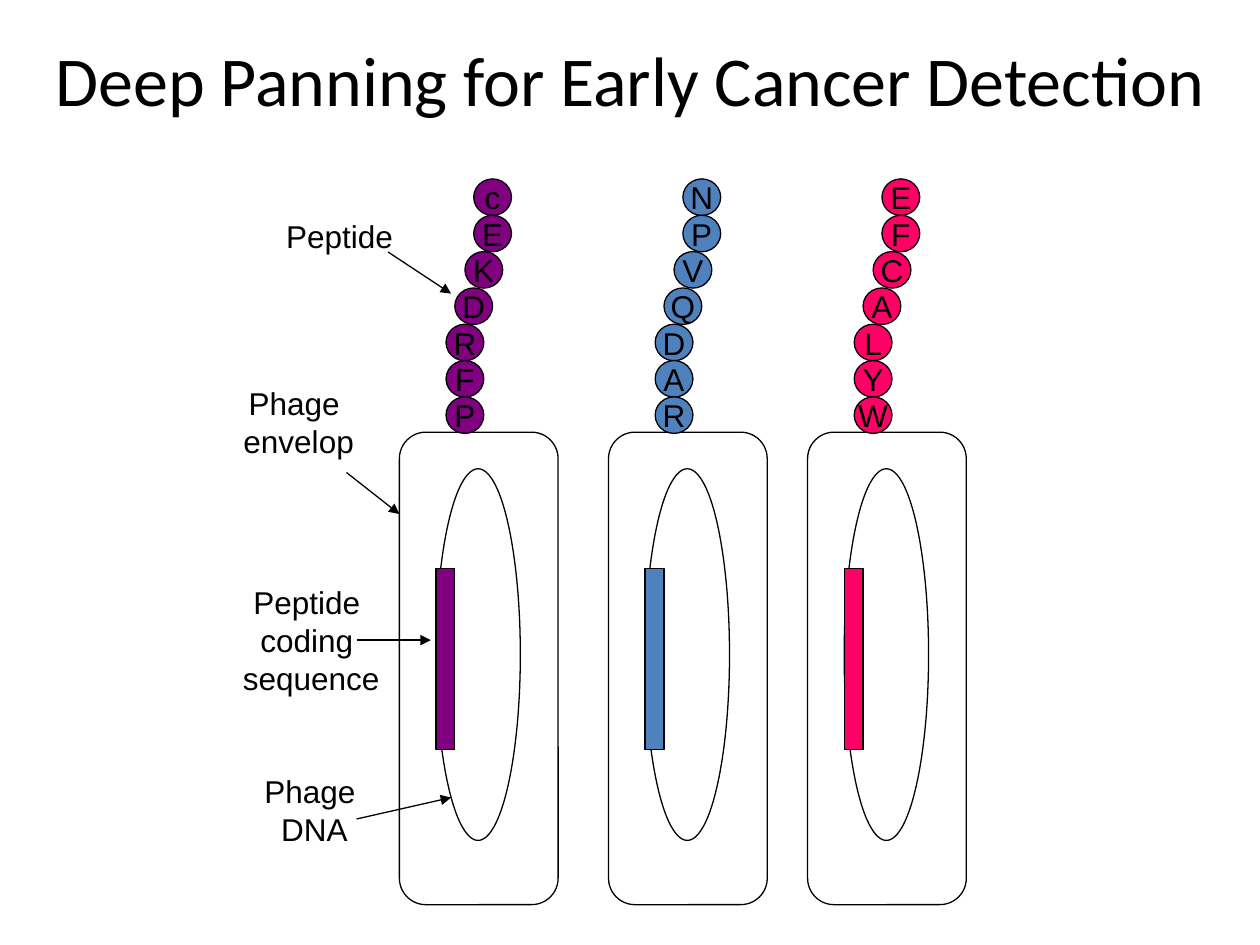
from pptx import Presentation
from pptx.dml.color import RGBColor
from pptx.enum.shapes import MSO_CONNECTOR, MSO_SHAPE as SHAPE
from pptx.enum.text import MSO_ANCHOR as ANCHOR, MSO_AUTO_SIZE as AUTO_SIZE, PP_ALIGN as ALIGN
from pptx.oxml.ns import qn
from pptx.util import Inches, Pt
from lxml.etree import SubElement

BLACK = RGBColor(0x00, 0x00, 0x00)
PURPLE = RGBColor(0x80, 0x00, 0x80)
BLUE = RGBColor(0x4F, 0x81, 0xBD)
PINK = RGBColor(0xFF, 0x00, 0x66)

# Content: phages as (envelope left, peptide from tip to base, colour)
TITLE = "Deep Panning for Early Cancer Detection"
PHAGES = [
    (3.17, "cEKDRFP", PURPLE),
    (4.83, "NPVQDAR", BLUE),
    (6.41, "EFCALYW", PINK),
]
# Labels as (lines, box, arrow start, arrow end)
LABELS = [
    (["Phage ", "envelop"], (1.83, 3, 1.08, 0.7), (2.75, 3.75), (3.17, 4.08)),
    (["Phage ", "DNA"], (2, 6.08, 0.99, 0.7), (2.83, 6.5), (3.58, 6.33)),
    (["Peptide ", "coding ", "sequence"], (1.77, 4.58, 1.4, 1), (2.83, 5.08), (3.42, 5.08)),
    (["Peptide"], (2.17, 1.67, 1.05, 0.4), (3.08, 2), (3.58, 2.33)),
]

# Geometry, with horizontal offsets measured from the envelope
ENVELOPE_TOP, ENVELOPE_W, ENVELOPE_H = 3.43, 1.26, 3.75
DNA_DX, DNA_TOP, DNA_W, DNA_H = 0.29, 3.72, 0.67, 2.95
CODING_TOP, CODING_W, CODING_H = 4.51, 0.15, 1.44
BEAD_W, BEAD_H = 0.3, 0.29
BEAD_DXS = [0.59, 0.59, 0.52, 0.44, 0.37, 0.37, 0.37]
BEAD_TOP, BEAD_LAST_TOP = 1.42, 3.15
BEAD_PITCH = (BEAD_LAST_TOP - BEAD_TOP) / (len(BEAD_DXS) - 1)


def write(frame, lines, font="Arial", size=18):
    frame.text = "\n".join(lines)
    for line in frame.paragraphs:
        line.alignment = ALIGN.CENTER
        line.font.name, line.font.size = font, Pt(size)
        line.font.color.rgb = BLACK


def add_outlined(shapes, kind, box, color=None):
    shape = shapes.add_shape(kind, *map(Inches, box))
    shape.shadow.inherit = False
    shape.line.color.rgb, shape.line.width = BLACK, Pt(0.75)
    if color is None:
        shape.fill.background()
    else:
        shape.fill.solid()
        shape.fill.fore_color.rgb = color
    return shape


def add_phage(shapes, left, peptide, color):
    dna_left = left + DNA_DX
    add_outlined(shapes, SHAPE.OVAL, (dna_left, DNA_TOP, DNA_W, DNA_H))
    add_outlined(shapes, SHAPE.RECTANGLE, (dna_left, CODING_TOP, CODING_W, CODING_H), color)
    envelope = add_outlined(shapes, SHAPE.ROUNDED_RECTANGLE,
                            (left, ENVELOPE_TOP, ENVELOPE_W, ENVELOPE_H))
    envelope.adjustments[0] = 1 / 6
    for row, (residue, dx) in enumerate(zip(peptide, BEAD_DXS)):
        box = (left + dx, BEAD_TOP + row * BEAD_PITCH, BEAD_W, BEAD_H)
        bead = add_outlined(shapes, SHAPE.OVAL, box, color)
        write(bead.text_frame, [residue])
        bead.text_frame.word_wrap = False
        bead.text_frame.vertical_anchor = ANCHOR.MIDDLE


def add_label(shapes, lines, box, start, end):
    frame = shapes.add_textbox(*map(Inches, box)).text_frame
    write(frame, lines)
    frame.word_wrap = False
    frame.auto_size = AUTO_SIZE.SHAPE_TO_FIT_TEXT
    arrow = shapes.add_connector(MSO_CONNECTOR.STRAIGHT, *map(Inches, start + end))
    arrow.line.color.rgb, arrow.line.width = BLACK, Pt(0.75)
    SubElement(arrow.line._get_or_add_ln(), qn("a:tailEnd"), type="triangle")
    SubElement(arrow._element.spPr, qn("a:effectLst"))


def main():
    deck = Presentation()
    deck.slide_width, deck.slide_height = Inches(10), Inches(7.5)
    slide = deck.slides.add_slide(deck.slide_layouts[6])

    # Title
    title = slide.shapes.add_textbox(0, 0, Inches(10), Inches(1.25)).text_frame
    write(title, [TITLE], "Calibri", 40)
    title.word_wrap = True
    title.vertical_anchor = ANCHOR.MIDDLE

    # Phages, one group each
    for phage in PHAGES:
        add_phage(slide.shapes.add_group_shape().shapes, *phage)

    # Labels with arrows
    labels = slide.shapes.add_group_shape().shapes
    for label in LABELS:
        add_label(labels, *label)

    deck.save("out.pptx")


if __name__ == "__main__":
    main()
